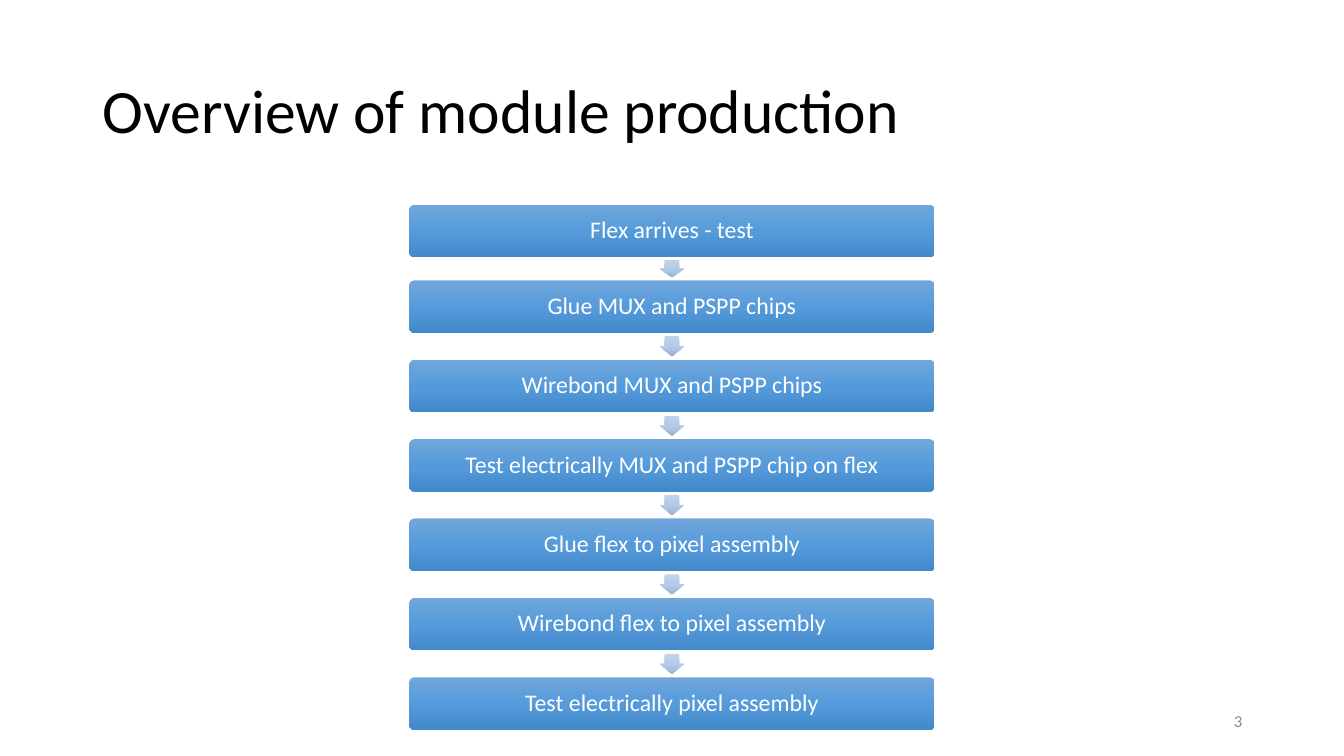
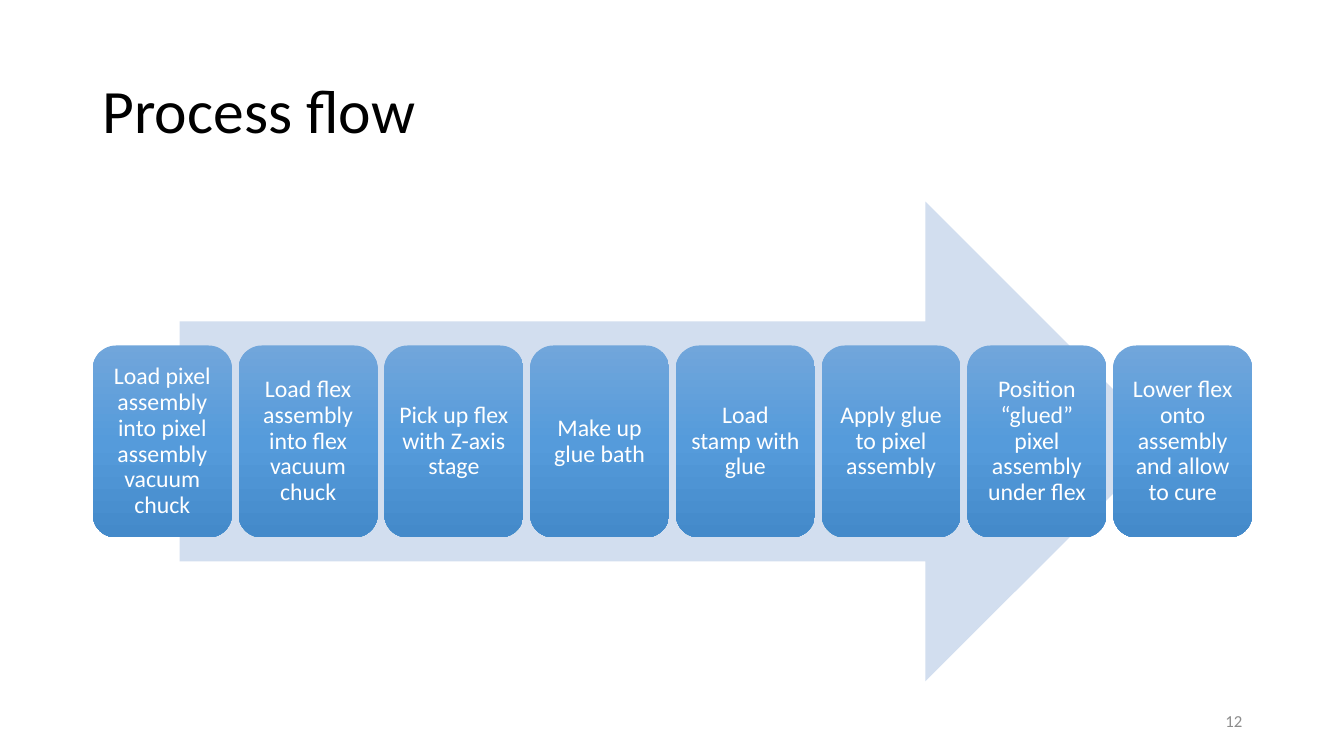
import lxml.etree
import pptx
import pptx.dml.color
import pptx.enum.shapes
import pptx.enum.text
import pptx.oxml.ns
import pptx.util

RGB = pptx.dml.color.RGBColor
SHAPE = pptx.enum.shapes.MSO_SHAPE
ALIGN = pptx.enum.text.PP_ALIGN
ANCHOR = pptx.enum.text.MSO_ANCHOR
inches = pptx.util.Inches
qn = pptx.oxml.ns.qn

BLACK = RGB(0x00, 0x00, 0x00)
WHITE = RGB(0xFF, 0xFF, 0xFF)
GREY = RGB(0x8C, 0x8C, 0x8C)
PALE_BLUE = RGB(0xD2, 0xDE, 0xEF)
STEP_BLUES = (RGB(0x71, 0xA6, 0xDB), RGB(0x55, 0x9B, 0xDB), RGB(0x44, 0x8A, 0xCA))
ARROW_BLUES = (RGB(0xC0, 0xD2, 0xEB), RGB(0xB3, 0xCB, 0xE9), RGB(0x9B, 0xB4, 0xD3))

FONT = "Calibri"
SLIDE_W, SLIDE_H = 13.33, 7.5
MARGIN = 0.92
CONTENT_W = 11.5
TITLE_BOX = (MARGIN, 0.4, CONTENT_W, 1.45)
NUMBER_BOX = (9.42, 6.95, 3, 0.4)
STACK_BOX = (4.06, 2.03, 5.21, 5.21)
FLOW_BOX = (MARGIN, 2, CONTENT_W, 4.76)

PRODUCTION_STEPS = [
    "Flex arrives - test",
    "Glue MUX and PSPP chips",
    "Wirebond MUX and PSPP chips",
    "Test electrically MUX and PSPP chip on flex",
    "Glue flex to pixel assembly",
    "Wirebond flex to pixel assembly",
    "Test electrically pixel assembly",
]
GLUING_STEPS = [
    "Load pixel assembly into pixel assembly vacuum chuck",
    "Load flex assembly into flex vacuum chuck",
    "Pick up flex with Z-axis stage",
    "Make up glue bath",
    "Load stamp with glue",
    "Apply glue to pixel assembly",
    "Position “glued” pixel assembly under flex",
    "Lower flex onto assembly and allow to cure",
]


def write_text(sp, text, size, color, align=ALIGN.LEFT, spacing=1.0, inset=None):
    tf = sp.text_frame
    tf.word_wrap = True
    tf.vertical_anchor = ANCHOR.MIDDLE
    if inset is not None:
        tf.margin_left = tf.margin_right = inches(inset)
        tf.margin_top = tf.margin_bottom = inches(inset)
    p = tf.paragraphs[0]
    p.alignment = align
    p.line_spacing = spacing
    r = p.add_run()
    r.text = text
    r.font.name = FONT
    r.font.size = pptx.util.Pt(size)
    r.font.color.rgb = color


def add_label(slide, box, text, **text_format):
    write_text(slide.shapes.add_textbox(*map(inches, box)), text, **text_format)


def fill_gradient(sp, colors):
    """Fill from top to bottom with evenly spaced colours."""
    sp.fill.gradient()
    sp.fill.gradient_angle = 270
    stops = sp._element.spPr.find(qn("a:gradFill")).find(qn("a:gsLst"))
    for stop in list(stops):
        stops.remove(stop)
    for i, color in enumerate(colors):
        position = 100000 * i // (len(colors) - 1)
        stop = lxml.etree.SubElement(stops, qn("a:gs"), pos=str(position))
        lxml.etree.SubElement(stop, qn("a:srgbClr"), val=str(color))


def add_block(slide, kind, box, colors, adjustments=()):
    """Add a borderless shape; several colours make a gradient."""
    sp = slide.shapes.add_shape(kind, *map(inches, box))
    sp.shadow.inherit = False
    sp.line.fill.background()
    for i, value in enumerate(adjustments):
        sp.adjustments[i] = value
    if len(colors) > 1:
        fill_gradient(sp, colors)
    else:
        sp.fill.solid()
        sp.fill.fore_color.rgb = colors[0]
    return sp


def add_step(slide, box, text, adjustments=()):
    sp = add_block(slide, SHAPE.ROUNDED_RECTANGLE, box, STEP_BLUES, adjustments)
    write_text(sp, text, size=17, color=WHITE, align=ALIGN.CENTER,
               spacing=0.9, inset=0.07)


def add_stack(slide, box, steps):
    """Stack the steps with a small down arrow in each gap."""
    left, top, width, height = box
    step_h, first_gap, arrow_w = height / 10, 0.23, 0.24
    other_gap = (height - len(steps) * step_h - first_gap) / (len(steps) - 2)
    for i, text in enumerate(steps):
        if i:
            gap = first_gap if i == 1 else other_gap
            arrow = (left + (width - arrow_w) / 2, top + gap / 8, arrow_w, gap * 0.75)
            add_block(slide, SHAPE.DOWN_ARROW, arrow, ARROW_BLUES, (0.6, 0.5))
            top += gap
        add_step(slide, (left, top, width, step_h), text, (0.1,))
        top += step_h


def add_flow(slide, box, steps):
    """Lay the steps in a row across one wide arrow."""
    left, top, width, height = box
    arrow = (left + width * 0.075, top, width * 0.85, height)
    add_block(slide, SHAPE.RIGHT_ARROW, arrow, (PALE_BLUE,))
    step_w = width * 0.12
    pitch = (width - step_w) / (len(steps) - 1)
    for i, text in enumerate(steps):
        step = (left + i * pitch, top + height * 0.3, step_w, height * 0.4)
        add_step(slide, step, text)


def add_slide(prs, title, number):
    slide = prs.slides.add_slide(prs.slide_layouts[6])
    add_label(slide, TITLE_BOX, title, size=44, color=BLACK, spacing=0.9)
    add_label(slide, NUMBER_BOX, str(number), size=12, color=GREY, align=ALIGN.RIGHT)
    return slide


def main():
    prs = pptx.Presentation()
    prs.slide_width, prs.slide_height = inches(SLIDE_W), inches(SLIDE_H)
    add_stack(add_slide(prs, "Overview of module production", 3),
              STACK_BOX, PRODUCTION_STEPS)
    add_flow(add_slide(prs, "Process flow", 12), FLOW_BOX, GLUING_STEPS)
    prs.save("out.pptx")


if __name__ == "__main__":
    main()
